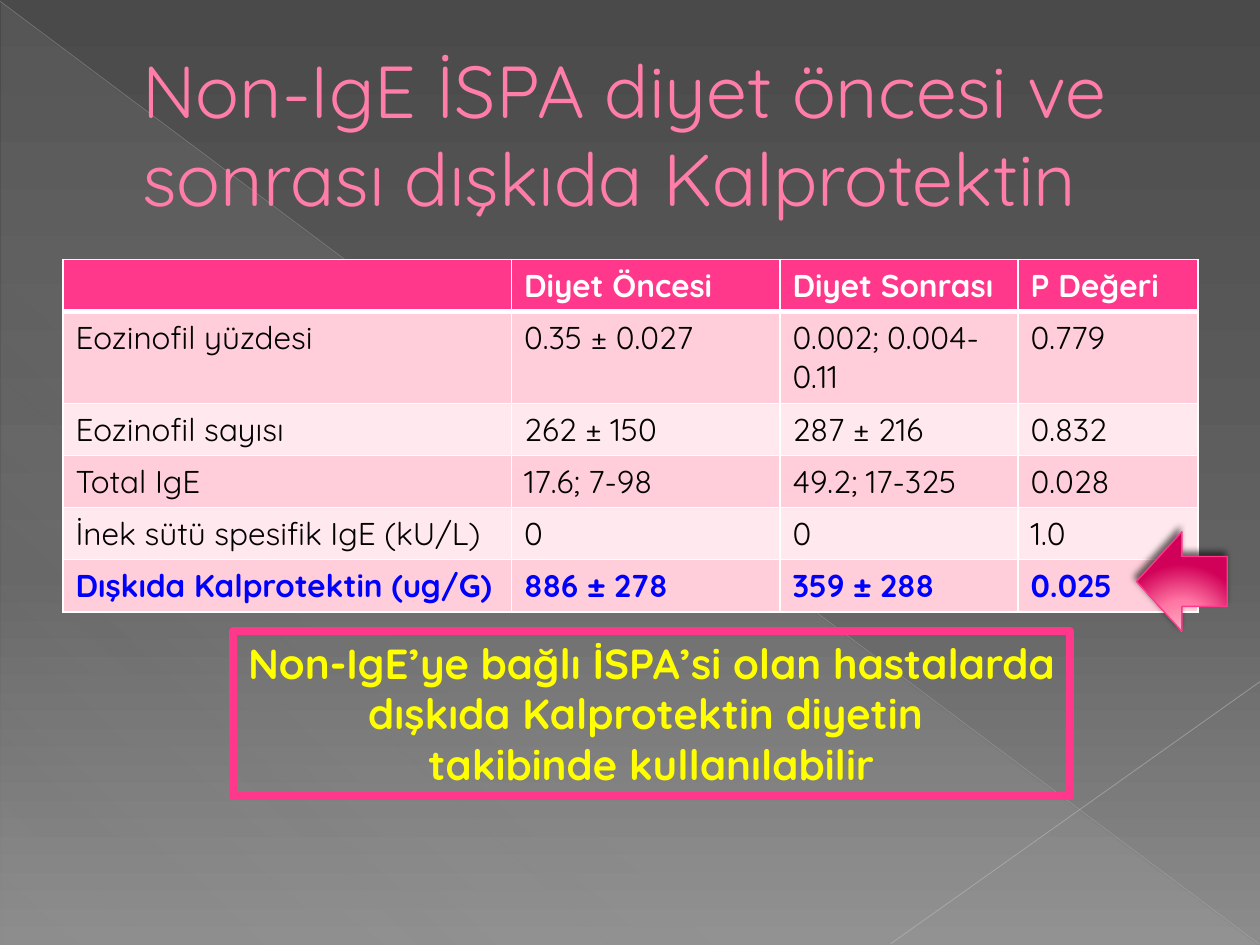
from lxml.etree import SubElement
from pptx import Presentation
from pptx.dml.color import RGBColor
from pptx.enum.shapes import MSO_CONNECTOR, MSO_SHAPE
from pptx.enum.text import MSO_ANCHOR, MSO_AUTO_SIZE, PP_ALIGN
from pptx.oxml import parse_xml
from pptx.oxml.ns import nsdecls, qn
from pptx.util import Inches, Pt

# Content
TITLE = "Non-IgE İSPA diyet öncesi ve sonrası dışkıda Kalprotektin"
ROWS = [
    ("", "Diyet Öncesi", "Diyet Sonrası", "P Değeri"),
    ("Eozinofil yüzdesi", "0.35 ± 0.027", "0.002; 0.004-0.11", "0.779"),
    ("Eozinofil sayısı", "262 ± 150", "287 ± 216", "0.832"),
    ("Total IgE", "17.6; 7-98", "49.2; 17-325", "0.028"),
    ("İnek sütü spesifik IgE (kU/L)", "0", "0", "1.0"),
    ("Dışkıda Kalprotektin (ug/G)", "886 ± 278", "359 ± 288", "0.025"),
]
CONCLUSION = [
    "Non-IgE’ye bağlı İSPA’si olan hastalarda ",
    "dışkıda Kalprotektin diyetin ",
    "takibinde kullanılabilir",
]
COL_WIDTHS = (3.56, 2.13, 1.89, 1.43)
ROW_HEIGHT = 0.41
FONT, PINK = "Quicksand", "FF388C"
# Corner lines: start, end, colour, width, opacity
CORNER_LINES = [
    ((0, 0.01), (9.99, 7.49), "BFBFBF", 0.39, 35),
    ((10, 5.41), (7.07, 7.49), "C6C6C6", 0.47, 45),
]


def rgb(color):
    return RGBColor.from_string(color)


def box(*lengths):
    return [Inches(v) for v in lengths]


def xml(text):
    """Parse a drawing element, adding the namespace to its root tag."""
    name, rest = text.split(" ", 1)
    return parse_xml(f"{name} {nsdecls('a')} {rest}")


def style(p, size, color, bold=False):
    values = {"name": FONT, "size": Pt(size), "bold": bold}
    for key, value in values.items():
        setattr(p.font, key, value)
        for r in p.runs:
            setattr(r.font, key, value)
    for r in p.runs:
        r.font.color.rgb = rgb(color)


def gradient(fill, element, stops, direction):
    """Give a fill its stops (position, colour, opacity) and direction."""
    fill.gradient()
    old = element.find(".//" + qn("a:gradFill"))
    marks = "".join(
        f'<a:gs pos="{pos * 1000}"><a:srgbClr val="{color}">'
        f'<a:alpha val="{opacity * 1000}"/></a:srgbClr></a:gs>'
        for pos, color, opacity in stops)
    new = xml(f'<a:gradFill rotWithShape="1"><a:gsLst>{marks}</a:gsLst>{direction}</a:gradFill>')
    old.getparent().replace(old, new)


def linear(angle):
    return f'<a:lin ang="{angle * 60000}" scaled="0"/>'


def border(cell, widths):
    tcPr = cell._tc.get_or_add_tcPr()
    for i, (side, width) in enumerate(widths.items()):
        tcPr.insert(i, xml(
            f'<a:ln{side} w="{Pt(width)}"><a:solidFill><a:srgbClr val="FFFFFF"/>'
            f'</a:solidFill><a:prstDash val="solid"/></a:ln{side}>'))


prs = Presentation()
prs.slide_width, prs.slide_height = Inches(10), Inches(7.5)
s = prs.slides.add_slide(prs.slide_layouts[5])

# Background
gradient(s.background.fill, s._element,
         [(0, "4A4A4A", 100), (60, "626262", 100), (100, "8C8C8C", 100)], linear(90))

# Corner decoration
sp = s.shapes.add_shape(MSO_SHAPE.RIGHT_TRIANGLE, *box(0.01, 0.02, 9.98, 7.48))
sp.shadow.inherit = False
sp.line.fill.background()
gradient(sp.fill, sp._element,
         [(0, "D2D2D2", 10), (70, "D2D2D2", 8), (100, "D2D2D2", 1)], linear(133))
for start, end, color, width, opacity in CORNER_LINES:
    line = s.shapes.add_connector(MSO_CONNECTOR.STRAIGHT, *box(*start, *end))
    line.line.color.rgb = rgb(color)
    line.line.width = Pt(width)
    clr = line._element.spPr.find(".//" + qn("a:srgbClr"))
    SubElement(clr, qn("a:alpha"), val=str(opacity * 1000))
    SubElement(line._element.spPr, qn("a:effectLst"))

# Title, in front of the decoration
title = s.shapes.title
s.shapes._spTree.append(title._element)
title.left, title.top, title.width, title.height = box(0.5, 0.29, 9, 1.53)
tf = title.text_frame
tf.text = TITLE
tf.word_wrap = True
tf.auto_size = MSO_AUTO_SIZE.NONE
tf.vertical_anchor = MSO_ANCHOR.MIDDLE
p = tf.paragraphs[0]
p.alignment = PP_ALIGN.LEFT
pPr = p._p.get_or_add_pPr()
pPr.set("marL", str(Inches(0.53)))
pPr.set("indent", "0")
style(p, 42, "FF7DA7")
p.runs[0].font._element.insert(0, xml(
    f'<a:ln w="{Pt(0.5)}"><a:solidFill><a:srgbClr val="B12761"/></a:solidFill></a:ln>'))

# Table
table = s.shapes.add_table(len(ROWS), len(COL_WIDTHS),
                           *box(0.5, 2.06, sum(COL_WIDTHS), ROW_HEIGHT * len(ROWS))).table
for col, width in zip(table.columns, COL_WIDTHS):
    col.width = Inches(width)
for i, row in enumerate(ROWS):
    table.rows[i].height = Inches(ROW_HEIGHT)
    header, last = i == 0, i == len(ROWS) - 1
    fill = PINK if header else ("FFCEDA" if i % 2 else "FFE8EE")
    color = "FFFFFF" if header else ("0000FF" if last else "000000")
    for j, text in enumerate(row):
        cell = table.cell(i, j)
        cell.text = text
        style(cell.text_frame.paragraphs[0], 18, color, header or last)
        cell.fill.solid()
        cell.fill.fore_color.rgb = rgb(fill)
        border(cell, {"L": 1, "R": 1, "T": 3 if i == 1 else 1, "B": 3 if header else 1})

# Arrow at the significant value
arrow = s.shapes.add_shape(MSO_SHAPE.LEFT_ARROW, *box(9.02, 4.22, 0.72, 0.79))
gradient(arrow.fill, arrow._element,
         [(0, "FFAFC5", 100), (46, "FF75A3", 100), (100, "D10058", 100)],
         '<a:path path="circle"><a:fillToRect l="50000" t="155000" r="50000" b="-55000"/></a:path>')
arrow.line.color.rgb = rgb(PINK)
arrow.line.width = Pt(0.75)
arrow._element.spPr.append(xml(
    f'<a:effectLst ><a:outerShdw blurRad="{Pt(4)}" dist="{Pt(3)}" dir="{245 * 60000}" '
    'rotWithShape="0"><a:srgbClr val="000000"><a:alpha val="60000"/></a:srgbClr>'
    '</a:outerShdw></a:effectLst>'))

# Conclusion
sp = s.shapes.add_textbox(*box(1.85, 5.01, 6.64, 1.31))
sp.line.color.rgb = rgb(PINK)
sp.line.width = Pt(4.5)
tf = sp.text_frame
tf.word_wrap = False
tf.auto_size = MSO_AUTO_SIZE.SHAPE_TO_FIT_TEXT
for i, text in enumerate(CONCLUSION):
    p = tf.add_paragraph() if i else tf.paragraphs[0]
    p.text = text
    p.alignment = PP_ALIGN.CENTER
    style(p, 24, "FFFF00", True)

prs.save("out.pptx")
